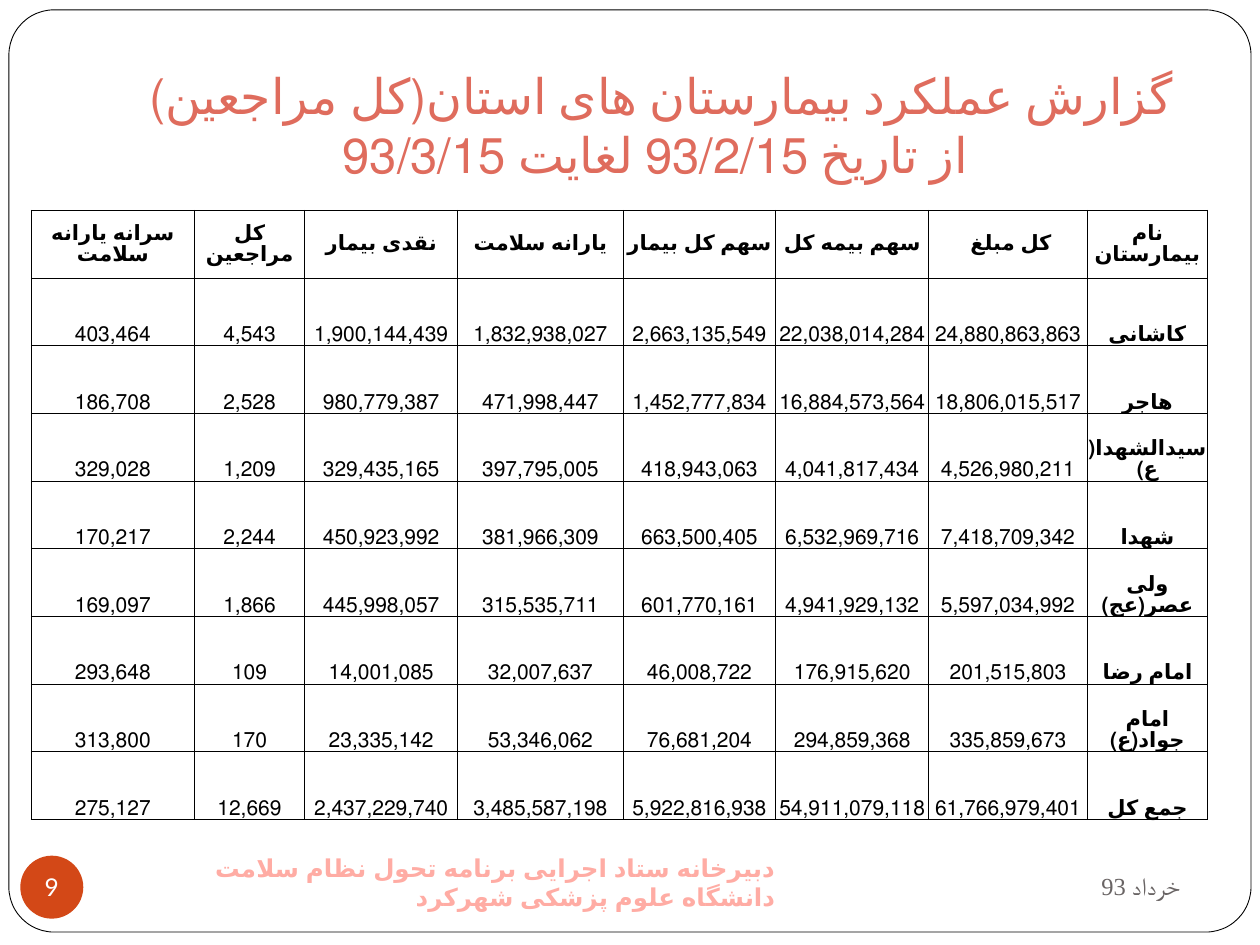
from dataclasses import dataclass

from lxml.etree import SubElement
from pptx import Presentation
from pptx.dml.color import RGBColor
from pptx.enum.lang import MSO_LANGUAGE_ID as Language
from pptx.enum.shapes import MSO_SHAPE as Preset
from pptx.enum.text import MSO_ANCHOR as Anchor, PP_ALIGN as Align
from pptx.oxml.ns import qn
from pptx.util import Cm, Pt

BLACK = RGBColor(0x00, 0x00, 0x00)
WHITE = RGBColor(0xFF, 0xFF, 0xFF)
CORAL = RGBColor(0xDF, 0x6C, 0x5D)
PINK = RGBColor(0xFF, 0xAC, 0xA4)
GREY = RGBColor(0x69, 0x64, 0x64)
ORANGE = RGBColor(0xD3, 0x48, 0x17)


@dataclass
class Style:
    font: str
    size: int
    color: RGBColor
    bold: bool = False
    align: Align = Align.CENTER
    persian: bool = True


@dataclass
class Footer:
    text: str
    left: float
    top: float
    width: float
    height: float
    style: Style


TITLE_LINES = ["گزارش عملکرد بیمارستان های استان(کل مراجعین)",
               " از تاریخ 93/2/15 لغایت 93/3/15"]
TITLE_STYLE = Style("Lato", 28, CORAL)
NUMBER_STYLE = Style("Lato", 14, WHITE, persian=False)
LABEL_STYLE = Style("Calibri", 12, BLACK, bold=True)
VALUE_STYLE = Style("Calibri", 12, BLACK)

FOOTERS = [
    Footer("93 خرداد", 17.15, 17.2, 6.88, 1.32,
           Style("Times New Roman", 14, GREY, align=Align.RIGHT, persian=False)),
    Footer("دبیرخانه ستاد اجرایی برنامه تحول نظام سلامت دانشگاه علوم پزشکی شهرکرد",
           2.54, 17.15, 13.34, 1.27,
           Style("Times New Roman", 14, PINK, bold=True, align=Align.RIGHT)),
]

COLUMN_WIDTHS = [3.29, 2.22, 3.09, 3.33, 3.08, 3.08, 3.2, 2.42]
ROW_HEIGHT = 1.364
HOSPITAL_ROWS = [
    ["سرانه یارانه سلامت", "کل مراجعین", "نقدی بیمار", "یارانه سلامت",
     "سهم کل بیمار", "سهم بیمه کل", "کل مبلغ ", "نام بیمارستان"],
    ["403,464", "4,543", "1,900,144,439", "1,832,938,027",
     "2,663,135,549", "22,038,014,284", "24,880,863,863", "کاشانی"],
    ["186,708", "2,528", "980,779,387", "471,998,447",
     "1,452,777,834", "16,884,573,564", "18,806,015,517", "هاجر"],
    ["329,028", "1,209", "329,435,165", "397,795,005",
     "418,943,063", "4,041,817,434", "4,526,980,211", "سیدالشهدا(ع)"],
    ["170,217", "2,244", "450,923,992", "381,966,309",
     "663,500,405", "6,532,969,716", "7,418,709,342", "شهدا"],
    ["169,097", "1,866", "445,998,057", "315,535,711",
     "601,770,161", "4,941,929,132", "5,597,034,992", "ولی عصر(عج)"],
    ["293,648", "109", "14,001,085", "32,007,637",
     "46,008,722", "176,915,620", "201,515,803", "امام رضا"],
    ["313,800", "170", "23,335,142", "53,346,062",
     "76,681,204", "294,859,368", "335,859,673", "امام جواد(ع)"],
    ["275,127", "12,669", "2,437,229,740", "3,485,587,198",
     "5,922,816,938", "54,911,079,118", "61,766,979,401", "جمع کل"],
]


def write(frame, lines: list[str], style: Style) -> None:
    """Fill the first paragraph, with a line break between lines."""
    para = frame.paragraphs[0]
    para.alignment = style.align
    if style.persian:
        para._p.get_or_add_pPr().set("rtl", "1")
    for index, line in enumerate(lines):
        if index:
            para.add_line_break()
        span = para.add_run()
        span.text = line
        span.font.name = style.font
        span.font.size = Pt(style.size)
        span.font.bold = style.bold
        span.font.color.rgb = style.color
        if style.persian:
            span.font.language_id = Language.FARSI


def add_frame(page) -> None:
    """Put the rounded page border behind everything else."""
    border = page.shapes.add_shape(Preset.ROUNDED_RECTANGLE,
                                   Cm(0.18), Cm(0.2), Cm(25.04), Cm(18.59))
    border.adjustments[0] = 0.049
    border.shadow.inherit = False
    border.fill.solid()
    border.fill.fore_color.rgb = WHITE
    border.line.color.rgb = BLACK
    border.line.width = Pt(0.5)
    page.shapes._spTree.insert(2, border._element)


def add_title(page) -> None:
    title = page.shapes.title
    title.left, title.top, title.width, title.height = (
        Cm(2.54), Cm(0.76), Cm(21.59), Cm(3.18))
    frame = title.text_frame
    frame.vertical_anchor = Anchor.BOTTOM
    frame.margin_bottom = Cm(0.25)
    write(frame, TITLE_LINES, TITLE_STYLE)


def add_footer(page, footer: Footer) -> None:
    box = page.shapes.add_textbox(Cm(footer.left), Cm(footer.top),
                                  Cm(footer.width), Cm(footer.height))
    box.text_frame.word_wrap = True
    box.text_frame.vertical_anchor = Anchor.MIDDLE
    write(box.text_frame, [footer.text], footer.style)


def add_page_number(page) -> None:
    disc = page.shapes.add_shape(Preset.OVAL, Cm(0.41), Cm(17.25), Cm(1.27), Cm(1.27))
    disc.shadow.inherit = False
    disc.fill.solid()
    disc.fill.fore_color.rgb = ORANGE
    disc.line.fill.background()
    frame = disc.text_frame
    frame.word_wrap = False
    frame.vertical_anchor = Anchor.MIDDLE
    frame.margin_left = frame.margin_right = frame.margin_top = frame.margin_bottom = 0
    write(frame, ["9"], NUMBER_STYLE)


def draw_borders(cell) -> None:
    properties = cell._tc.get_or_add_tcPr()
    for side in ("a:lnL", "a:lnR", "a:lnT", "a:lnB"):
        line = SubElement(properties, qn(side), w=str(Pt(0.5)))
        fill = SubElement(line, qn("a:solidFill"))
        SubElement(fill, qn("a:srgbClr"), val=str(BLACK))


def add_hospital_table(page) -> None:
    row_count, column_count = len(HOSPITAL_ROWS), len(COLUMN_WIDTHS)
    table = page.shapes.add_table(row_count, column_count, Cm(0.63), Cm(4.24),
                                  Cm(sum(COLUMN_WIDTHS)),
                                  Cm(ROW_HEIGHT * row_count)).table
    for column, width in zip(table.columns, COLUMN_WIDTHS):
        column.width = Cm(width)
    for row_index, values in enumerate(HOSPITAL_ROWS):
        table.rows[row_index].height = Cm(ROW_HEIGHT)
        for column_index, value in enumerate(values):
            cell = table.cell(row_index, column_index)
            is_header = row_index == 0
            is_label = is_header or column_index == column_count - 1
            cell.margin_left = cell.margin_right = cell.margin_top = Cm(0.02)
            cell.margin_bottom = 0
            cell.vertical_anchor = Anchor.MIDDLE if is_header else Anchor.BOTTOM
            draw_borders(cell)
            cell.fill.solid()
            cell.fill.fore_color.rgb = WHITE
            write(cell.text_frame, [value], LABEL_STYLE if is_label else VALUE_STYLE)


def main() -> None:
    deck = Presentation()
    deck.slide_width, deck.slide_height = Cm(25.4), Cm(19.05)
    page = deck.slides.add_slide(deck.slide_layouts[5])
    add_frame(page)
    add_title(page)
    for footer in FOOTERS:
        add_footer(page, footer)
    add_page_number(page)
    add_hospital_table(page)
    deck.save("out.pptx")


if __name__ == "__main__":
    main()
